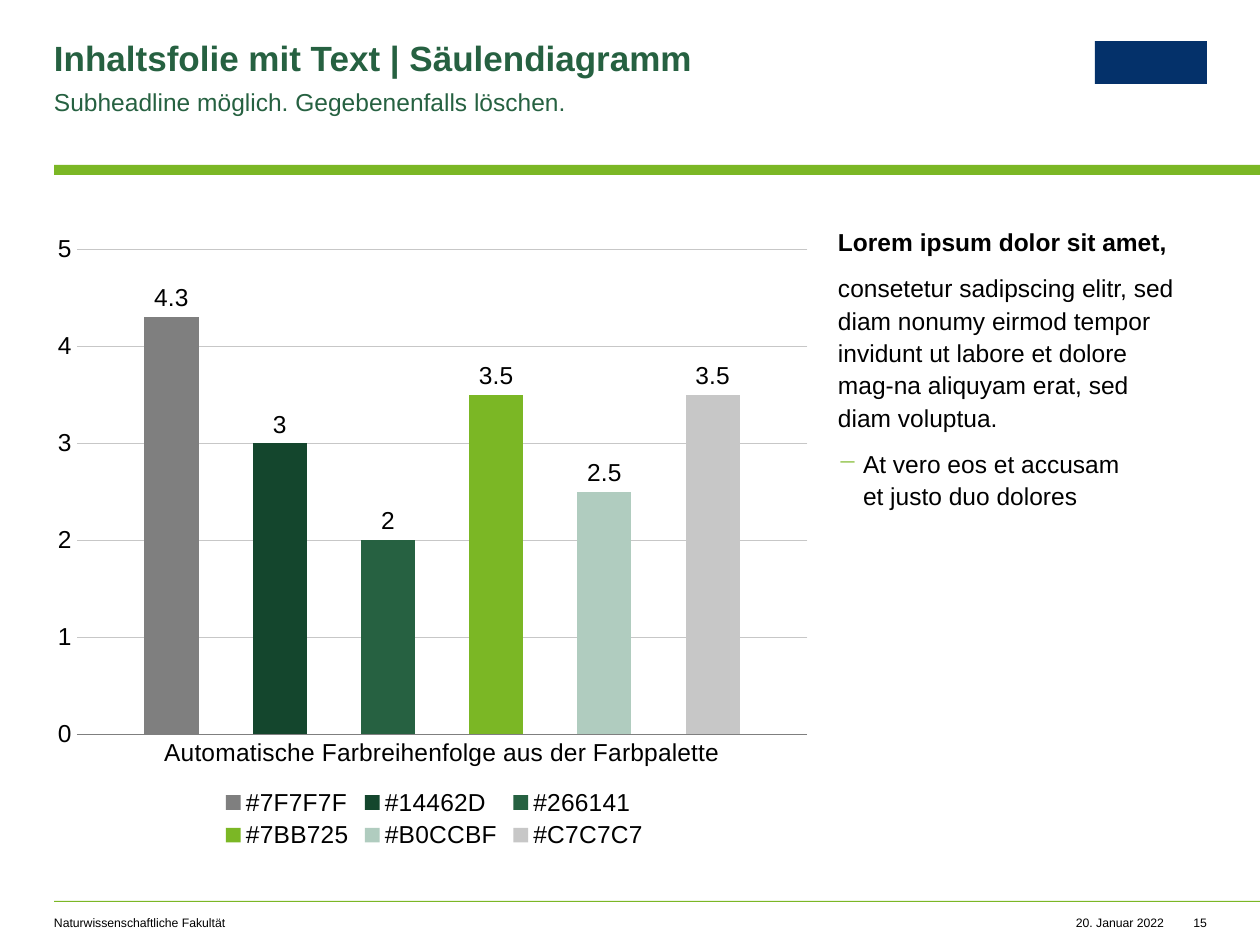
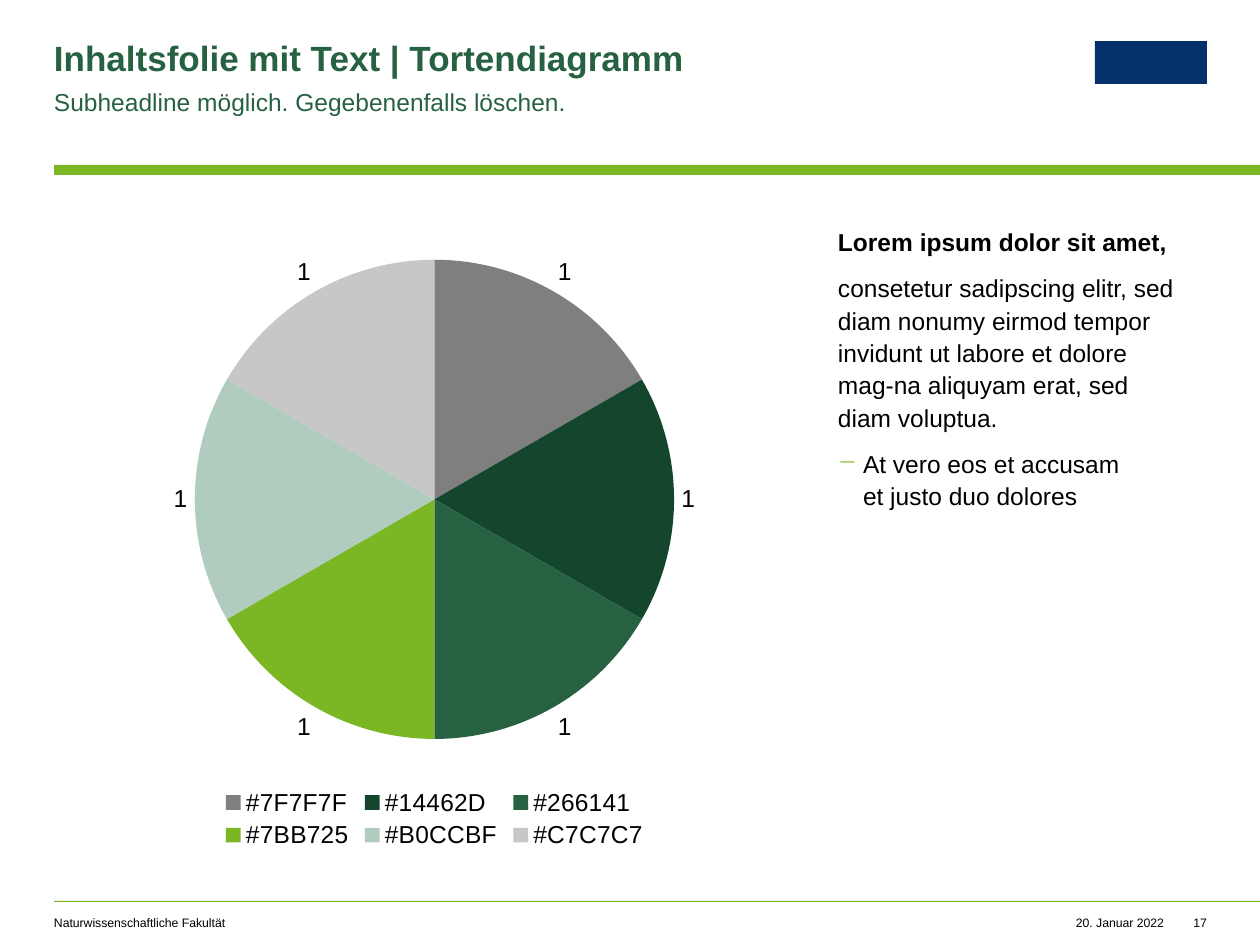
from lxml import etree
from pptx import Presentation
from pptx import util as u
from pptx.chart import data
from pptx.dml import color
from pptx.enum import chart as ch, shapes, text
from pptx.oxml import ns

FONT = "Arial"
BLACK, GREEN, LIME, NAVY, GREY = "000000", "266141", "7BB725", "04316A", "C7C7C7"
HUES = ["7F7F7F", "14462D", GREEN, LIME, "B0CCBF", GREY]
NAMES = ["#" + hue for hue in HUES]

SUB = "Subheadline möglich. Gegebenenfalls löschen."
UNIT = "Naturwissenschaftliche Fakultät"
DATE = "20. Januar 2022"
BODY = [
    ("Lorem ipsum dolor sit amet,", True, False),
    ("consetetur sadipscing elitr, sed diam nonumy eirmod tempor invidunt ut "
     "labore et dolore mag-na aliquyam erat, sed diam voluptua.", False, False),
    ("At vero eos et accusam\net justo duo dolores", False, True),
]
SLIDES = [
    dict(title="Inhaltsfolie mit Text | Säulendiagramm", page="15", kind="column",
         cats=["Automatische Farbreihenfolge aus der Farbpalette"],
         rows=[(name, [val]) for name, val in zip(NAMES, [4.3, 3, 2, 3.5, 2.5, 3.5])]),
    dict(title="Inhaltsfolie mit Text | Tortendiagramm", page="17", kind="pie",
         cats=NAMES, rows=[("Series 1", [1] * len(NAMES))]),
]

WIDE, HIGH = 1260, 945
LEFT, RIGHT = 54, 1207
TOP, TALL = 224, 630
HEAD, FOOT = 707, 915
PLOT = dict(x=0.03, y=0.04, w=0.96, h=0.77)
SCALE = u.Inches(10) / WIDE


def px(n):
    return u.Emu(round(n * SCALE))


def rgb(tone):
    return color.RGBColor.from_string(tone)


def style(font, size, tone=BLACK, bold=False):
    font.name, font.size, font.bold = FONT, u.Pt(size), bold
    font.color.rgb = rgb(tone)


def paint(form, tone):
    form.fill.solid()
    form.fill.fore_color.rgb = rgb(tone)


def block(slide, box, tone):
    rect = slide.shapes.add_shape(shapes.MSO_SHAPE.RECTANGLE, *map(px, box))
    rect.shadow.inherit = False
    rect.line.fill.background()
    paint(rect, tone)


def dash(para):
    props = para._p.get_or_add_pPr()
    props.set("marL", str(px(25)))
    props.set("indent", str(-px(25)))
    tint = etree.SubElement(props, ns.qn("a:buClr"))
    etree.SubElement(tint, ns.qn("a:srgbClr")).set("val", LIME)
    etree.SubElement(props, ns.qn("a:buChar")).set("char", "−")


def write(slide, box, items, size, tone=BLACK, inset=0, wrap=True, grow=True,
          right=False, lead=1.0, after=0):
    frame = slide.shapes.add_textbox(*map(px, box)).text_frame
    frame.margin_left = frame.margin_top = frame.margin_bottom = 0
    frame.margin_right = px(inset)
    frame.word_wrap = wrap
    fit = text.MSO_AUTO_SIZE
    frame.auto_size = fit.SHAPE_TO_FIT_TEXT if grow else fit.NONE
    for i, (words, bold, listed) in enumerate(items):
        para = frame.add_paragraph() if i else frame.paragraphs[0]
        para.alignment = text.PP_ALIGN.RIGHT if right else text.PP_ALIGN.LEFT
        para.line_spacing, para.space_after = lead, u.Pt(after)
        if listed:
            dash(para)
        for j, line in enumerate(words.split("\n")):
            if j:
                para.add_line_break()
            run = para.add_run()
            run.text = line
            style(run.font, size, tone, bold)


def base(slide, title, page):
    block(slide, (LEFT, 165, WIDE - LEFT, 10), LIME)
    block(slide, (LEFT, 901, WIDE - LEFT, 1), LIME)
    block(slide, (RIGHT - 112, 41, 112, 43), NAVY)
    write(slide, (1075, FOOT, 89, 15), [(DATE, False, False)], 7, wrap=False, right=True)
    write(slide, (LEFT, FOOT, 566, 15), [(UNIT, False, False)], 7)
    write(slide, (RIGHT - 25, FOOT, 25, 15), [(page, False, False)], 7,
          wrap=False, right=True)
    write(slide, (838, TOP, RIGHT - 838, TALL), BODY, 14, inset=25, grow=False,
          lead=1.1, after=8)
    write(slide, (LEFT, 41, HEAD, 38), [(title, True, False)], 20, GREEN, lead=0.9)
    write(slide, (LEFT, 84, HEAD, 30), [(SUB, False, False)], 14, GREEN, inset=49,
          lead=1.1, after=8)


def place(chart):
    area = chart.element.find(".//" + ns.qn("c:plotArea"))
    for old in area.findall(ns.qn("c:layout")):
        area.remove(old)
    layout = etree.Element(ns.qn("c:layout"))
    area.insert(0, layout)
    spot = etree.SubElement(layout, ns.qn("c:manualLayout"))
    parts = [("layoutTarget", "inner"), ("xMode", "edge"), ("yMode", "edge")]
    for tag, val in parts + list(PLOT.items()):
        etree.SubElement(spot, ns.qn("c:" + tag)).set("val", str(val))


def axes(chart):
    cat, val = chart.category_axis, chart.value_axis
    for axis in (cat, val):
        axis.major_tick_mark = axis.minor_tick_mark = ch.XL_TICK_MARK.NONE
        style(axis.tick_labels.font, 14)
    cat.format.line.color.rgb = rgb(HUES[0])
    cat.format.line.width = u.Pt(0.5)
    val.format.line.fill.background()
    val.minimum_scale, val.maximum_scale, val.major_unit = 0, 5, 1
    val.has_major_gridlines = True
    grid = val.major_gridlines.format.line
    grid.color.rgb, grid.width = rgb(GREY), u.Pt(0.5)


def graph(slide, kind, cats, rows):
    pie = kind == "pie"
    source = data.CategoryChartData()
    source.categories = cats
    for name, vals in rows:
        source.add_series(name, vals)
    sort = ch.XL_CHART_TYPE.PIE if pie else ch.XL_CHART_TYPE.COLUMN_CLUSTERED
    box = map(px, (LEFT, TOP, 761, TALL))
    chart = slide.shapes.add_chart(sort, *box, source).chart
    style(chart.font, 10 if pie else 14)
    chart.has_title = False
    chart.has_legend = True
    chart.legend.position = ch.XL_LEGEND_POSITION.BOTTOM
    chart.legend.include_in_layout = False
    style(chart.legend.font, 14)
    plot = chart.plots[0]
    plot.vary_by_categories = pie
    plot.has_data_labels = True
    tags = plot.data_labels
    tags.show_value, tags.show_percentage = True, False
    tags.position = ch.XL_LABEL_POSITION.OUTSIDE_END
    style(tags.font, 14)
    if pie:
        parts = [plot.series[0].points[i] for i in range(len(cats))]
    else:
        parts = plot.series
        plot.gap_width, plot.overlap = 250, -100
        axes(chart)
        place(chart)
    for part, hue in zip(parts, HUES):
        paint(part.format, hue)


def main():
    deck = Presentation()
    deck.slide_width, deck.slide_height = px(WIDE), px(HIGH)
    for page in SLIDES:
        slide = deck.slides.add_slide(deck.slide_layouts[6])
        base(slide, page["title"], page["page"])
        graph(slide, page["kind"], page["cats"], page["rows"])
    deck.save("out.pptx")


if __name__ == "__main__":
    main()
